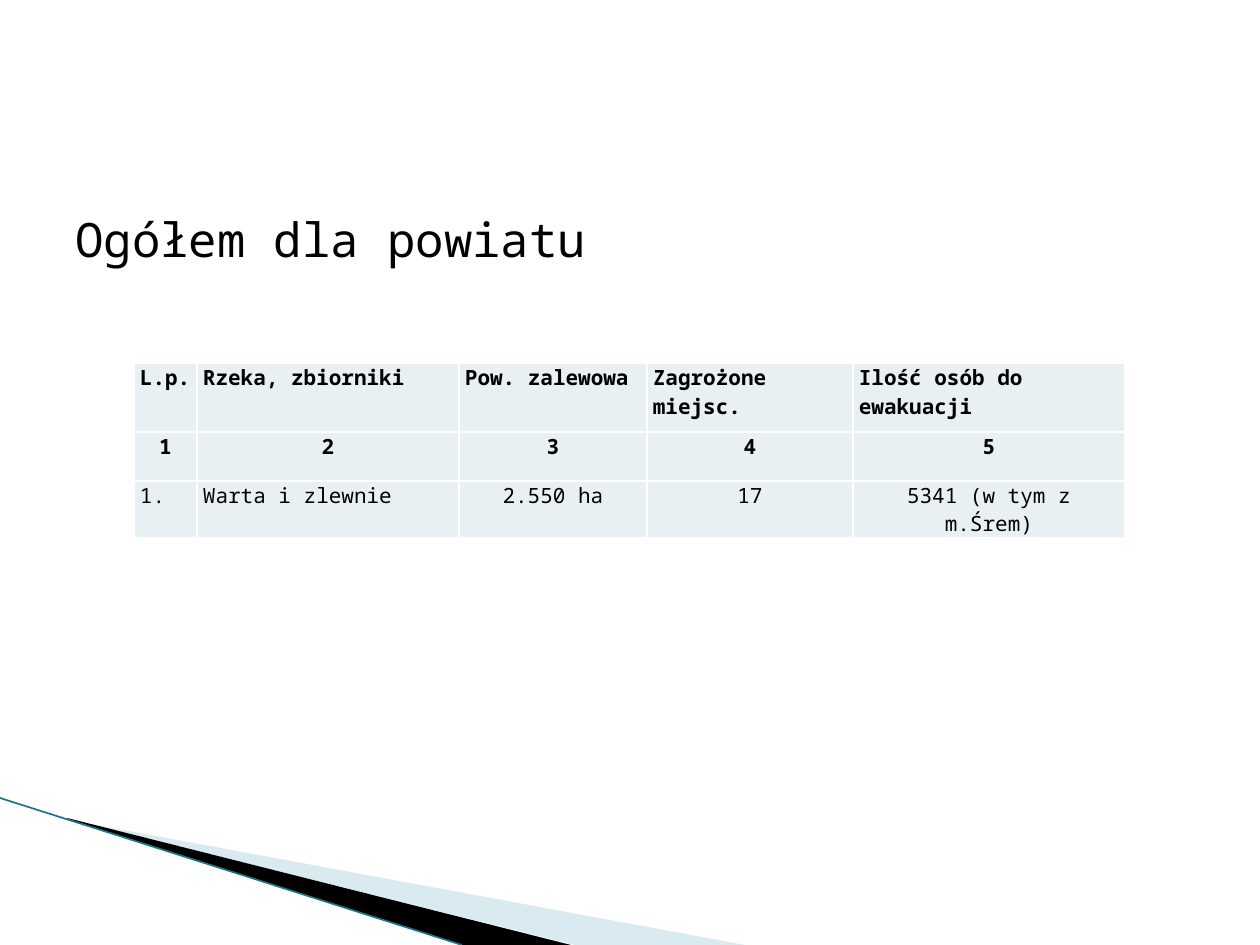
from lxml.etree import SubElement
from pptx import Presentation
from pptx.dml.color import RGBColor
from pptx.enum.shapes import MSO_CONNECTOR as Connector
from pptx.enum.text import MSO_ANCHOR as Anchor, MSO_AUTO_SIZE as AutoSize, PP_ALIGN as Align
from pptx.oxml.ns import qn
from pptx.util import Pt

SCALE = 914400 / 126
FONT = "Noto Sans Mono"
COLUMNS = [63, 262, 188, 206, 272]
ROWS = [
    (69, ["L.p.", "Rzeka, zbiorniki", "Pow. zalewowa", "Zagrożone miejsc.", "Ilość osób do ewakuacji"]),
    (49, ["1", "2", "3", "4", "5"]),
    (40, ["1.", "Warta i zlewnie", "2.550 ha", "17", "5341 (w tym z m.Śrem)"]),
]
CENTRED_FROM = [5, 0, 2]


def px(value):
    """Turn pixels into EMU."""
    return round(value * SCALE)


def color(value):
    """Turn a hex string into a colour."""
    return RGBColor.from_string(value)


def add_run(paragraph, text, size, bold=False):
    """Add one black run in the slide font."""
    run = paragraph.add_run()
    run.text = text
    run.font.name = FONT
    run.font.size = Pt(size)
    run.font.bold = bold
    run.font.color.rgb = color("000000")


def add_wedge(slide, left, top, points, fill, alpha=100):
    """Draw a filled outline whose points are relative to left and top."""
    points = [(left + x, top + y) for x, y in points]
    builder = slide.shapes.build_freeform(*points[0], scale=SCALE)
    builder.add_line_segments(points[1:], close=True)
    shape = builder.convert_to_shape()
    shape.shadow.inherit = False
    shape.line.fill.background()
    shape.fill.solid()
    shape.fill.fore_color.rgb = color(fill)
    if alpha < 100:
        element = shape.fill._xPr.find(".//" + qn("a:srgbClr"))
        SubElement(element, qn("a:alpha"), val=str(alpha * 1000))


def add_corner(slide, left, top, width, height):
    """Draw the wedges and the line in the lower left corner."""
    add_wedge(slide, left, top, [(69, 22), (width, height), (575, height), (69, 21)], "A0CBDC", 40)
    add_wedge(slide, left, top, [(67, 20), (571, height), (462, height), (68, 21)], "000000")
    line = slide.shapes.add_connector(
        Connector.STRAIGHT, px(left), px(top), px(left + 462), px(top + height))
    line.line.color.rgb = color("1B7587")
    line.line.width = Pt(0.95)
    SubElement(line._element.spPr, qn("a:effectLst"))


def add_title(slide, left, top, width, height):
    """Place the heading in the title placeholder."""
    title = slide.shapes.title
    title.left, title.top, title.width, title.height = map(px, (left, top, width, height))
    frame = title.text_frame
    frame.word_wrap = True
    frame.auto_size = AutoSize.NONE
    frame.vertical_anchor = Anchor.TOP
    paragraph = frame.paragraphs[0]
    paragraph.alignment = Align.LEFT
    add_run(paragraph, "Ogółem dla powiatu", 27)


def format_cell(cell):
    """Give a cell its margins, white borders and fill."""
    cell.margin_left = cell.margin_right = px(6)
    cell.margin_top = cell.margin_bottom = 0
    properties = cell._tc.get_or_add_tcPr()
    for side in ("lnL", "lnR", "lnT", "lnB"):
        border = SubElement(properties, qn("a:" + side), w=str(Pt(1)))
        SubElement(SubElement(border, qn("a:solidFill")), qn("a:srgbClr"), val="FFFFFF")
    cell.fill.solid()
    cell.fill.fore_color.rgb = color("E8F0F4")


def add_flood_table(slide, left, top, width, height):
    """Add the table of flood risk in the district."""
    table = slide.shapes.add_table(
        len(ROWS), len(COLUMNS), px(left), px(top), px(width), px(height)).table
    for column, column_width in zip(table.columns, COLUMNS):
        column.width = px(column_width)
    for row_index, (row_height, texts) in enumerate(ROWS):
        table.rows[row_index].height = px(row_height)
        for column_index, text in enumerate(texts):
            cell = table.cell(row_index, column_index)
            format_cell(cell)
            paragraph = cell.text_frame.paragraphs[0]
            centred = column_index >= CENTRED_FROM[row_index]
            paragraph.alignment = Align.CENTER if centred else Align.LEFT
            paragraph.space_after = Pt(3)
            add_run(paragraph, text, 12, bold=row_index < 2)


def main():
    """Build and save the slide."""
    presentation = Presentation()
    presentation.slide_width, presentation.slide_height = px(1260), px(945)
    slide = presentation.slides.add_slide(presentation.slide_layouts[5])
    add_corner(slide, 0, 798, 745, 147)
    add_title(slide, 63, 204, 1134, 624)
    add_flood_table(slide, 134, 363, sum(COLUMNS), sum(height for height, _ in ROWS))
    presentation.save("out.pptx")


if __name__ == "__main__":
    main()
